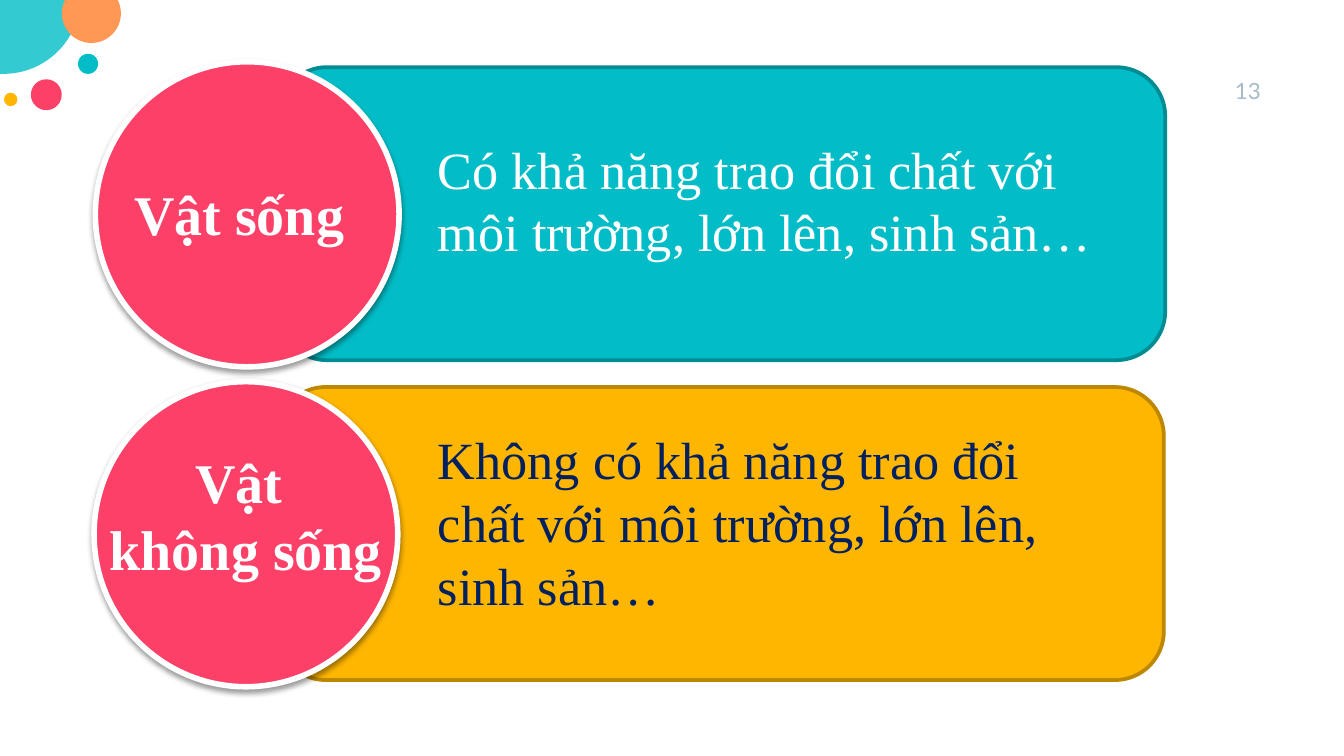
from lxml import etree
from pptx import Presentation
from pptx.dml.color import RGBColor
from pptx.enum.shapes import MSO_SHAPE
from pptx.enum.text import MSO_ANCHOR, MSO_AUTO_SIZE, PP_ALIGN
from pptx.oxml.ns import qn
from pptx.util import Inches, Pt

OVAL = MSO_SHAPE.OVAL
ROUNDED = MSO_SHAPE.ROUNDED_RECTANGLE
MIDDLE = MSO_ANCHOR.MIDDLE
FIT_SHAPE, FIXED_SIZE = MSO_AUTO_SIZE.SHAPE_TO_FIT_TEXT, MSO_AUTO_SIZE.NONE
LEFT, CENTER, RIGHT = PP_ALIGN.LEFT, PP_ALIGN.CENTER, PP_ALIGN.RIGHT

TEAL = RGBColor(0x02, 0xBD, 0xC7)
DARK_TEAL = RGBColor(0x01, 0x8C, 0x93)
ORANGE = RGBColor(0xFF, 0x97, 0x55)
PINK = RGBColor(0xFC, 0x40, 0x67)
YELLOW = RGBColor(0xFF, 0xB6, 0x00)
DARK_YELLOW = RGBColor(0xBD, 0x87, 0x00)
NAVY = RGBColor(0x00, 0x20, 0x60)
GREY = RGBColor(0xA6, 0xBC, 0xC9)
WHITE = RGBColor(0xFF, 0xFF, 0xFF)

SERIF = "Times New Roman"

# Left, top, diameter, colour
BUBBLES = [
    (-0.55, -0.6, 1.15, TEAL),
    (0.46, -0.12, 0.44, ORANGE),
    (0.58, 0.4, 0.15, TEAL),
    (0.23, 0.59, 0.23, PINK),
    (0.03, 0.69, 0.1, YELLOW),
]


def add_filled_shape(slide, kind, at, fill, line=None, line_width=0):
    shape = slide.shapes.add_shape(kind, *map(Inches, at))
    shape.shadow.inherit = False
    shape.fill.solid()
    shape.fill.fore_color.rgb = fill
    if line is None:
        shape.line.fill.background()
    else:
        shape.line.color.rgb = line
        shape.line.width = Pt(line_width)
    return shape


def set_opacity(shape, percent):
    color = shape._element.spPr.find(qn("a:solidFill"))[0]
    etree.SubElement(color, qn("a:alpha"), val=str(percent * 1000))


def add_soft_shadow(shape):
    effects = shape._element.spPr.find(qn("a:effectLst"))
    shadow = etree.SubElement(
        effects, qn("a:outerShdw"), blurRad=str(Pt(3.1)), dist=str(Pt(1.6)),
        dir="5400000", rotWithShape="0")
    color = etree.SubElement(shadow, qn("a:srgbClr"), val="000000")
    etree.SubElement(color, qn("a:alpha"), val="38000")


def add_text(slide, at, text, size, color, font=SERIF, bold=False, align=LEFT):
    box = slide.shapes.add_textbox(*map(Inches, at))
    frame = box.text_frame
    frame.word_wrap = True
    frame.auto_size = FIT_SHAPE
    frame.text = text
    for para in frame.paragraphs:
        para.alignment = align
        for span in para.runs:
            span.font.size = Pt(size)
            span.font.name = font
            span.font.bold = bold
            span.font.color.rgb = color
    return box


def add_panel(slide, left, top, fill, border):
    """Rounded panel with a pink disc over its left end."""
    add_filled_shape(slide, ROUNDED, (left + 1.36, top + 0.04, 6.6, 2.18),
                     fill, border, 2)
    disc = add_filled_shape(slide, OVAL, (left, top, 2.26, 2.27), PINK, WHITE, 3)
    add_soft_shadow(disc)


def add_page_number(slide):
    box = add_text(slide, (8.88, 0.46, 0.6, 0.43), "13", 12, GREY,
                   font="Lato", align=RIGHT)
    frame = box.text_frame
    frame.auto_size = FIXED_SIZE
    frame.vertical_anchor = MIDDLE
    frame.margin_top = frame.margin_bottom = Inches(0.1)


def main():
    # Widescreen page, 16:9
    deck = Presentation()
    deck.slide_width = Inches(10)
    deck.slide_height = Inches(10 * 9 / 16)
    slide = deck.slides.add_slide(deck.slide_layouts[6])

    # Corner decoration; the largest bubble is slightly transparent
    bubbles = [add_filled_shape(slide, OVAL, (left, top, size, size), color)
               for left, top, size, color in BUBBLES]
    set_opacity(bubbles[0], 80)
    add_page_number(slide)

    # Living things
    add_panel(slide, 0.71, 0.46, TEAL, DARK_TEAL)
    add_text(slide, (0.9, 1.29, 1.87, 0.61), "Vật sống", 30, WHITE, bold=True)
    add_text(slide, (3.16, 0.97, 5.12, 1.04),
             "Có khả năng trao đổi chất với môi trường, lớn lên, sinh sản…",
             28, WHITE)

    # Non-living things
    add_panel(slide, 0.7, 2.84, YELLOW, DARK_YELLOW)
    add_text(slide, (0.6, 3.28, 2.46, 1.11), "Vật \nkhông sống", 30, WHITE,
             bold=True, align=CENTER)
    add_text(slide, (3.16, 3.13, 5.12, 1.51),
             "Không có khả năng trao đổi chất với môi trường, lớn lên, sinh sản…",
             28, NAVY)

    deck.save("out.pptx")


if __name__ == "__main__":
    main()
